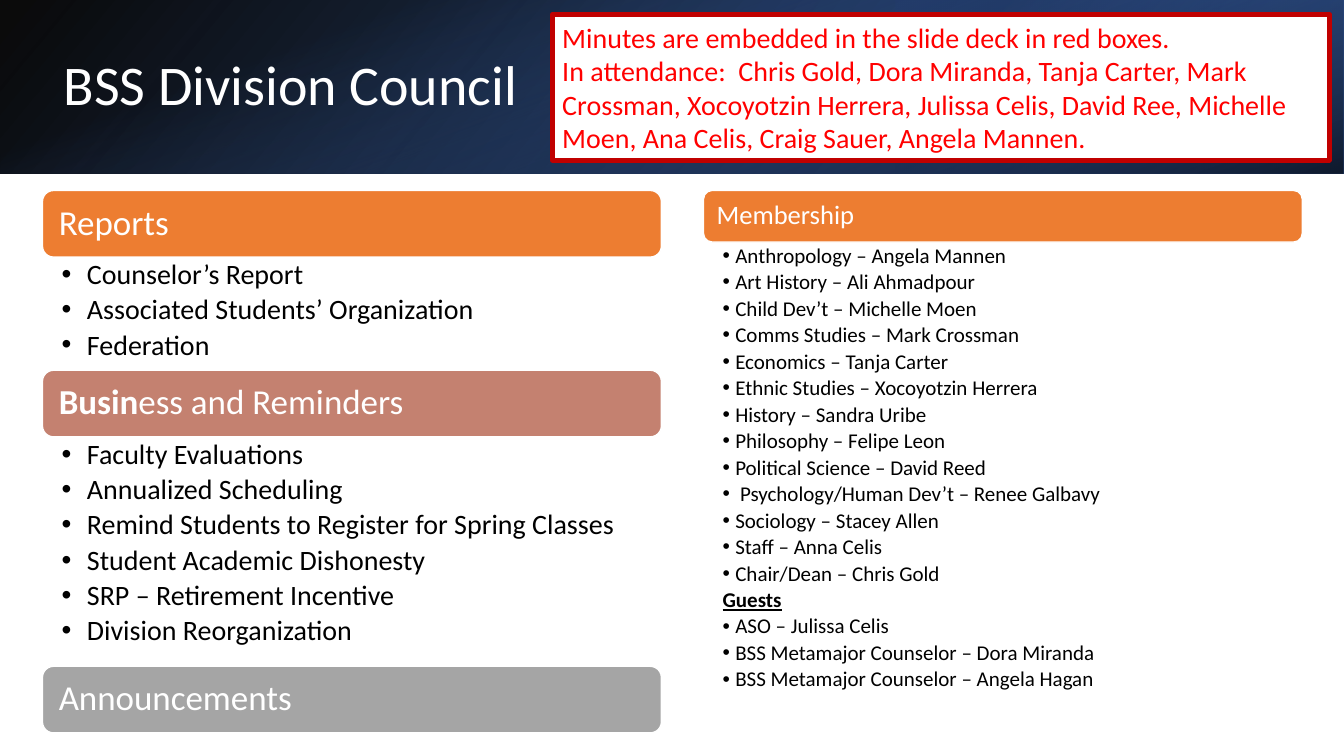
from dataclasses import dataclass

from lxml.etree import SubElement
from pptx import Presentation
from pptx.dml.color import RGBColor
from pptx.enum.shapes import MSO_SHAPE
from pptx.enum.text import MSO_ANCHOR, MSO_AUTO_SIZE, PP_ALIGN
from pptx.oxml.ns import qn
from pptx.util import Cm, Pt


@dataclass(frozen=True)
class Theme:
    font: str = "Calibri"
    white: str = "FFFFFF"
    black: str = "000000"
    orange: str = "ED7D31"
    clay: str = "C48170"
    gray: str = "A5A5A5"
    navy: str = "203864"
    royal: str = "2F5597"
    blue: str = "4472C4"
    minutes_text: str = "FF0000"
    minutes_border: str = "C00000"
    title_size: int = 40
    heading_size: int = 25
    membership_size: int = 19
    list_size: int = 20
    member_size: int = 15


THEME = Theme()
SLIDE_W, SLIDE_H = 33.87, 19.05
BANNER_H = 4.37
HEADING_LINE = 0.9


def color(code):
    return RGBColor.from_string(code)


def add_run(paragraph, text, size, code, bold=False, underline=False):
    run = paragraph.add_run()
    run.text = text
    font = run.font
    font.name, font.size = THEME.font, Pt(size)
    font.bold, font.underline = bold, underline
    font.color.rgb = color(code)


def place(shape, box):
    shape.left, shape.top, shape.width, shape.height = (Cm(v) for v in box)


def add_box(slide, kind, box, fill, border, border_width):
    panel = slide.shapes.add_shape(kind, *(Cm(v) for v in box))
    panel.shadow.inherit = False
    panel.fill.solid()
    panel.fill.fore_color.rgb = color(fill)
    panel.line.color.rgb = color(border)
    panel.line.width = Pt(border_width)
    return panel


# Banner: three translucent gradients stacked behind the title
def add_banner(slide, box):
    left, top, width, height = box
    third = width / 3
    turned = (left + (width - height) / 2, top - (width - height) / 2, height, width)
    # box, rotation, mirrored, clockwise angle, stops of (position, colour, opacity)
    layers = [
        (box, 0, True, 140, [(0, THEME.black, 96), (100, THEME.royal, 100)]),
        ((left + 2 * third, top, third, height), 180, True, 320,
         [(19, THEME.navy, 68), (100, THEME.blue, 79)]),
        (turned, 90, False, 340, [(23, THEME.blue, 0), (99, THEME.black, 74)]),
    ]
    for order, (area, rotation, mirrored, angle, stops) in enumerate(layers):
        layer = slide.shapes.add_shape(MSO_SHAPE.RECTANGLE, *(Cm(v) for v in area))
        layer.shadow.inherit = False
        layer.line.fill.background()
        layer.rotation = rotation
        if mirrored:
            layer._element.spPr.find(qn("a:xfrm")).set("flipH", "1")
        layer.fill.gradient()
        layer.fill.gradient_angle = 360 - angle
        for stop, (position, code, _) in zip(layer.fill.gradient_stops, stops):
            stop.position = position / 100
            stop.color.rgb = color(code)
        stop_colors = layer._element.xpath(".//a:gs/a:srgbClr")
        for stop_color, (_, _, opacity) in zip(stop_colors, stops):
            SubElement(stop_color, qn("a:alpha")).set("val", str(opacity * 1000))
        slide.shapes._spTree.insert(2 + order, layer._element)


def fill_title(title, text, box):
    place(title, box)
    frame = title.text_frame
    frame.auto_size = MSO_AUTO_SIZE.NONE
    frame.vertical_anchor = MSO_ANCHOR.MIDDLE
    paragraph = frame.paragraphs[0]
    paragraph.alignment = PP_ALIGN.LEFT
    paragraph.line_spacing = HEADING_LINE
    add_run(paragraph, text, THEME.title_size, THEME.white)


def add_minutes(slide, box, lines):
    minutes = add_box(slide, MSO_SHAPE.RECTANGLE, box, THEME.white,
                      THEME.minutes_border, 3.25)
    frame = minutes.text_frame
    frame.word_wrap = True
    frame.auto_size = MSO_AUTO_SIZE.SHAPE_TO_FIT_TEXT
    for index, line in enumerate(lines):
        paragraph = frame.add_paragraph() if index else frame.paragraphs[0]
        paragraph.alignment = PP_ALIGN.LEFT
        add_run(paragraph, line, THEME.list_size, THEME.minutes_text)


def add_heading(slide, box, runs, fill, size, inset):
    heading = add_box(slide, MSO_SHAPE.ROUNDED_RECTANGLE, box, fill, THEME.white, 1)
    frame = heading.text_frame
    frame.word_wrap = True
    frame.vertical_anchor = MSO_ANCHOR.MIDDLE
    frame.margin_left = frame.margin_right = Cm(inset)
    paragraph = frame.paragraphs[0]
    paragraph.alignment = PP_ALIGN.LEFT
    paragraph.line_spacing = HEADING_LINE
    for text, bold in runs:
        add_run(paragraph, text, size, THEME.white, bold)


def fill_list(body, box, items, size, indent, subheads=()):
    place(body, box)
    frame = body.text_frame
    frame.word_wrap = True
    frame.auto_size = MSO_AUTO_SIZE.NONE
    frame.vertical_anchor = MSO_ANCHOR.TOP
    frame.margin_left = frame.margin_right = Cm(0.48)
    frame.margin_top = frame.margin_bottom = Cm(0.08)
    for index, item in enumerate(items):
        paragraph = frame.add_paragraph() if index else frame.paragraphs[0]
        paragraph.level = 1
        paragraph.alignment = PP_ALIGN.LEFT
        paragraph.line_spacing = HEADING_LINE
        paragraph.space_before = Pt(0)
        paragraph.space_after = Pt(0.18 * size)
        properties = paragraph._p.get_or_add_pPr()
        properties.set("marL", str(Cm(indent)))
        properties.set("indent", str(-Cm(indent)))
        subhead = item in subheads
        if subhead:
            SubElement(properties, qn("a:buNone"))
        else:
            SubElement(properties, qn("a:buFont")).set("typeface", "Arial")
            SubElement(properties, qn("a:buChar")).set("char", "•")
        add_run(paragraph, item, size, THEME.black, subhead, subhead)


# Left column: agenda headings with their lists
def add_agenda(slide, box, reports, business):
    left, top, width, height = box
    bar = 1.68
    business_top, announcements_top = top + 4.53, top + height - bar
    headings = [
        (top, [("Reports", False)], THEME.orange),
        (business_top, [("Busin", True), ("ess and Reminders", False)], THEME.clay),
        (announcements_top, [("Announcements", False)], THEME.gray),
    ]
    for bar_top, runs, fill in headings:
        add_heading(slide, (left, bar_top, width, bar), runs, fill,
                    THEME.heading_size, 0.33)
    lists = [
        (reports, top, business_top,
         ["Counselor’s Report", "Associated Students’ Organization", "Federation"]),
        (business, business_top, announcements_top,
         ["Faculty Evaluations", "Annualized Scheduling",
          "Remind Students to Register for Spring Classes",
          "Student Academic Dishonesty", "SRP – Retirement Incentive",
          "Division Reorganization"]),
    ]
    for body, bar_top, bottom, items in lists:
        list_top = bar_top + bar
        fill_list(body, (left, list_top, width, bottom - list_top), items,
                  THEME.list_size, 0.64)


# Right column: membership
def add_membership(slide, box, members):
    left, top, width, height = box
    bar = 1.3
    add_heading(slide, (left, top, width, bar), [("Membership", False)],
                THEME.orange, THEME.membership_size, 0.27)
    fill_list(members, (left, top + bar, width, height - bar), [
        "Anthropology – Angela Mannen", "Art History – Ali Ahmadpour",
        "Child Dev’t – Michelle Moen", "Comms Studies – Mark Crossman",
        "Economics – Tanja Carter", "Ethnic Studies – Xocoyotzin Herrera",
        "History – Sandra Uribe", "Philosophy – Felipe Leon",
        "Political Science – David Reed", " Psychology/Human Dev’t – Renee Galbavy",
        "Sociology – Stacey Allen", "Staff – Anna Celis", "Chair/Dean – Chris Gold",
        "Guests", "ASO – Julissa Celis", "BSS Metamajor Counselor – Dora Miranda",
        "BSS Metamajor Counselor – Angela Hagan",
    ], THEME.member_size, 0.32, subheads=("Guests",))


def main():
    deck = Presentation()
    deck.slide_width, deck.slide_height = Cm(SLIDE_W), Cm(SLIDE_H)
    slide = deck.slides.add_slide(deck.slide_layouts[4])
    title, spare, reports, members, business = slide.placeholders
    spare._element.getparent().remove(spare._element)

    add_banner(slide, (0, 0, SLIDE_W, BANNER_H))
    fill_title(title, "BSS Division Council", (1.35, 0.97, 27.89, 2.44))
    add_agenda(slide, (1.07, 4.8, 15.6, 13.67), reports, business)
    add_membership(slide, (17.73, 4.8, 15.09, 13.54), members)
    add_minutes(slide, (13.92, 0.36, 19.58, 3.68), [
        "Minutes are embedded in the slide deck in red boxes.",
        "In attendance:  Chris Gold, Dora Miranda, Tanja Carter, Mark Crossman, "
        "Xocoyotzin Herrera, Julissa Celis, David Ree, Michelle Moen, Ana Celis, "
        "Craig Sauer, Angela Mannen.",
    ])
    deck.save("out.pptx")


if __name__ == "__main__":
    main()
